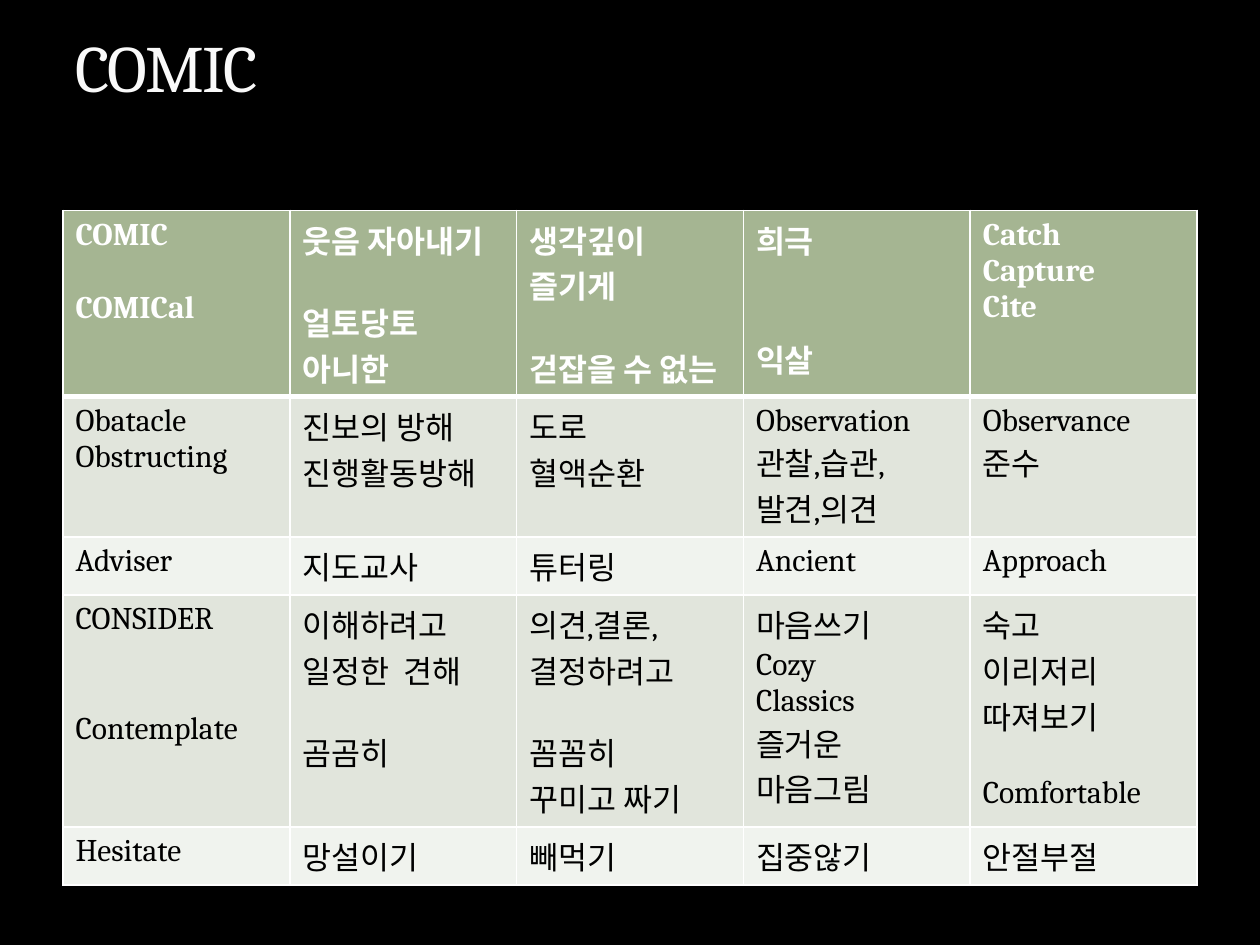
from dataclasses import dataclass

from lxml.etree import SubElement
from pptx import Presentation
from pptx.dml.color import RGBColor as Color
from pptx.enum.text import MSO_ANCHOR as Anchor
from pptx.oxml import parse_xml
from pptx.oxml.ns import nsdecls, qn
from pptx.util import Inches, Pt


@dataclass(frozen=True)
class Theme:
    font: str = "Cambria"
    background: str = "000000"
    title: str = "F9F9F9"
    title_outline: str = "3C4422"
    header: str = "A5B592"
    header_text: str = "FFFFFF"
    bands: tuple = ("E1E5DC", "F0F3EE")
    body_text: str = "000000"
    border: str = "FFFFFF"
    title_size: float = 37.8
    table_size: float = 18
    line_gap: float = 21
    thin: float = 1
    thick: float = 3


THEME = Theme()
GAP = ""
WORDS = [
    [
        ["COMIC", GAP, "COMICal"],
        ["웃음 자아내기", GAP, "얼토당토", "아니한"],
        ["생각깊이", "즐기게", GAP, "걷잡을 수 없는"],
        ["희극", GAP, GAP, "익살"],
        ["Catch", "Capture", "Cite"],
    ],
    [
        ["Obatacle", "Obstructing"],
        ["진보의 방해", "진행활동방해"],
        ["도로", "혈액순환"],
        ["Observation", "관찰,습관,", "발견,의견"],
        ["Observance", "준수"],
    ],
    [["Adviser"], ["지도교사"], ["튜터링"], ["Ancient"], ["Approach"]],
    [
        ["CONSIDER", GAP, GAP, "Contemplate"],
        ["이해하려고", "일정한  견해", GAP, "곰곰히"],
        ["의견,결론,", "결정하려고", GAP, "꼼꼼히", "꾸미고 짜기"],
        ["마음쓰기", "Cozy", "Classics", "즐거운", "마음그림"],
        ["숙고", "이리저리", "따져보기", GAP, "Comfortable"],
    ],
    [["Hesitate"], ["망설이기"], ["빼먹기"], ["집중않기"], ["안절부절"]],
]


def add_span(para, text, size, color, bold=False):
    span = para.add_run()
    span.text = text
    span.font.name = THEME.font
    span.font.size = Pt(size)
    span.font.bold = bold
    span.font.color.rgb = Color.from_string(color)
    return span


def outline_span(span, color, width, opacity):
    properties = span.font._element
    properties.set("spc", "-100")
    properties.insert(0, parse_xml(
        f'<a:ln {nsdecls("a")} w="{Pt(width)}"><a:solidFill><a:srgbClr val="{color}">'
        f'<a:alpha val="{opacity * 1000}"/></a:srgbClr></a:solidFill></a:ln>'))


def add_title(page, text, left, top, width, height):
    box = page.shapes.add_textbox(left, top, width, height)
    frame = box.text_frame
    frame.word_wrap = True
    frame.vertical_anchor = Anchor.BOTTOM
    frame.margin_bottom = Inches(0.66)
    span = add_span(frame.paragraphs[0], text, THEME.title_size, THEME.title)
    outline_span(span, THEME.title_outline, 0.25, 25)


def set_borders(cell, top, bottom):
    properties = cell._tc.get_or_add_tcPr()
    widths = {"lnL": THEME.thin, "lnR": THEME.thin, "lnT": top, "lnB": bottom}
    for tag, width in widths.items():
        line = SubElement(properties, qn(f"a:{tag}"), w=str(Pt(width)))
        fill = SubElement(line, qn("a:solidFill"))
        SubElement(fill, qn("a:srgbClr"), val=THEME.border)


def write_lines(frame, lines, color, bold):
    para, gaps = frame.paragraphs[0], 0
    for index, text in enumerate(lines):
        if text == GAP:
            gaps += 1
            continue
        if index:
            para = frame.add_paragraph()
        if gaps:
            para.space_before = Pt(gaps * THEME.line_gap)
        add_span(para, text, THEME.table_size, color, bold)
        gaps = 0


def add_word_table(page, rows, left, top, width, row_height):
    columns = len(rows[0])
    table = page.shapes.add_table(
        len(rows), columns, left, top, width, row_height * len(rows)).table
    table.first_row = table.horz_banding = False
    for column in table.columns:
        column.width = width // columns
    for row_index, row in enumerate(rows):
        table.rows[row_index].height = row_height
        header = row_index == 0
        fill = THEME.header if header else THEME.bands[(row_index - 1) % 2]
        color = THEME.header_text if header else THEME.body_text
        for column_index, lines in enumerate(row):
            cell = table.cell(row_index, column_index)
            set_borders(cell,
                        top=THEME.thick if row_index == 1 else THEME.thin,
                        bottom=THEME.thick if header else THEME.thin)
            cell.fill.solid()
            cell.fill.fore_color.rgb = Color.from_string(fill)
            write_lines(cell.text_frame, lines, color, header)


def main():
    deck = Presentation()
    deck.slide_width, deck.slide_height = Inches(10), Inches(7.5)
    page = deck.slides.add_slide(deck.slide_layouts[6])
    page.background.fill.solid()
    page.background.fill.fore_color.rgb = Color.from_string(THEME.background)
    left, width = Inches(0.5), Inches(9)
    add_word_table(page, WORDS, left, Inches(1.67), width, Inches(0.41))
    add_title(page, "COMIC", left, Inches(0.17), width, Inches(1.33))
    deck.save("out.pptx")


if __name__ == "__main__":
    main()
